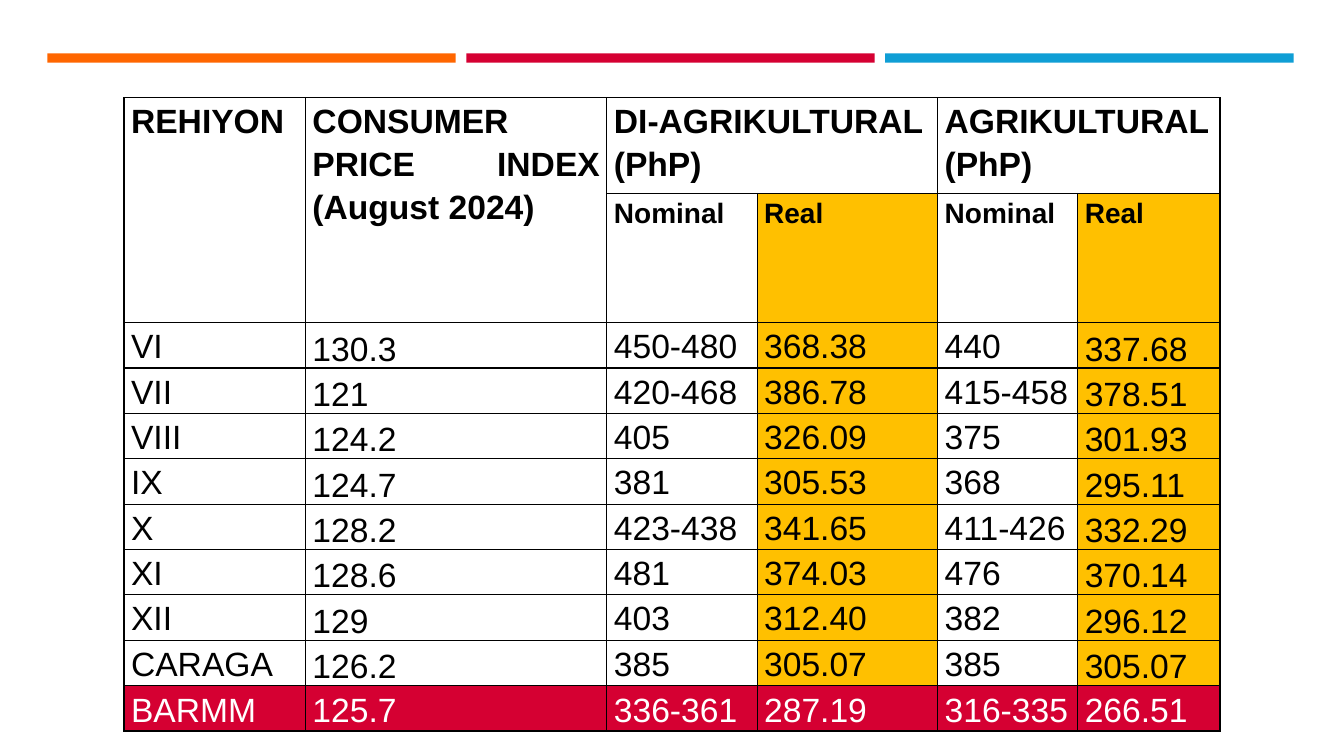
from dataclasses import dataclass

from lxml.etree import SubElement
from pptx import Presentation
from pptx.dml.color import RGBColor
from pptx.enum.shapes import MSO_SHAPE
from pptx.enum.text import MSO_ANCHOR as Anchor, PP_ALIGN as Align
from pptx.oxml.ns import qn
from pptx.slide import Slide
from pptx.table import Table, _Cell as Cell
from pptx.util import Inches, Length, Pt

SLIDE_WIDTH = Inches(13.33)
SLIDE_HEIGHT = Inches(7.5)


@dataclass(frozen=True)
class Theme:
    font: str = "Arial"
    body_size: int = 24
    subhead_size: int = 20
    line_spacing: float = 1.15
    border_width: int = 1
    text: str = "000000"
    paper: str = "FFFFFF"
    orange: str = "FF6600"
    red: str = "D50032"
    blue: str = "0F9ED5"
    real_wage: str = "FFC000"


THEME = Theme()


@dataclass(frozen=True)
class CellStyle:
    fill: str = THEME.paper
    color: str = THEME.text
    size: int = THEME.body_size
    bold: bool = False
    align: Align = Align.JUSTIFY
    anchor: Anchor = Anchor.TOP


@dataclass(frozen=True)
class HeaderCell:
    row: int
    column: int
    text: str
    row_span: int = 1
    column_span: int = 1
    size: int = THEME.body_size


@dataclass(frozen=True)
class RegionWages:
    region: str
    price_index: str
    nonfarm_nominal: str
    nonfarm_real: str
    farm_nominal: str
    farm_real: str

    def values(self) -> tuple[str, ...]:
        return (self.region, self.price_index, self.nonfarm_nominal,
                self.nonfarm_real, self.farm_nominal, self.farm_real)


BAR_COLORS = (THEME.orange, THEME.red, THEME.blue)
BAR_LEFT, BAR_TOP, BAR_WIDTH, BAR_HEIGHT, BAR_GAP = 3.53, 7.07, 30.38, 1.2, 0.79

TABLE_LEFT, TABLE_TOP = 9.23, 12.93
COLUMN_SHARES = (13.5, 22.43, 11.18, 13.43, 10.43, 10.58)
HEADER_SHARES = (12.67, 17.07)
BODY_SHARE = 6
REAL_COLUMNS = (3, 5)
BOTTOM_COLUMNS = (1, 5)

HEADERS = (
    HeaderCell(0, 0, "REHIYON", row_span=2),
    HeaderCell(0, 1, "CONSUMER PRICE INDEX (August 2024)", row_span=2),
    HeaderCell(0, 2, "DI-AGRIKULTURAL (PhP)", column_span=2),
    HeaderCell(0, 4, "AGRIKULTURAL (PhP)", column_span=2),
    *(HeaderCell(1, column, "Real" if column in REAL_COLUMNS else "Nominal",
                 size=THEME.subhead_size) for column in range(2, 6)),
)

REGIONS = (
    RegionWages("VI", "130.3", "450-480", "368.38", "440", "337.68"),
    RegionWages("VII", "121", "420-468", "386.78", "415-458", "378.51"),
    RegionWages("VIII", "124.2", "405", "326.09", "375", "301.93"),
    RegionWages("IX", "124.7", "381", "305.53", "368", "295.11"),
    RegionWages("X", "128.2", "423-438", "341.65", "411-426", "332.29"),
    RegionWages("XI", "128.6", "481", "374.03", "476", "370.14"),
    RegionWages("XII", "129", "403", "312.40", "382", "296.12"),
    RegionWages("CARAGA", "126.2", "385", "305.07", "385", "305.07"),
    RegionWages("BARMM", "125.7", "336-361", "287.19", "316-335", "266.51"),
)
HIGHLIGHTED_REGION = "BARMM"


def across(percent: float) -> Length:
    return Length(round(SLIDE_WIDTH * percent / 100))


def down(percent: float) -> Length:
    return Length(round(SLIDE_HEIGHT * percent / 100))


def draw_bars(slide: Slide) -> None:
    for index, color in enumerate(BAR_COLORS):
        left = BAR_LEFT + index * (BAR_WIDTH + BAR_GAP)
        bar = slide.shapes.add_shape(MSO_SHAPE.RECTANGLE, across(left), down(BAR_TOP),
                                     across(BAR_WIDTH), down(BAR_HEIGHT))
        bar.shadow.inherit = False
        bar.fill.solid()
        bar.fill.fore_color.rgb = RGBColor.from_string(color)
        bar.line.fill.background()


def add_borders(cell: Cell) -> None:
    properties = cell._tc.get_or_add_tcPr()
    for side in ("a:lnL", "a:lnR", "a:lnT", "a:lnB"):
        line = SubElement(properties, qn(side), w=str(Pt(THEME.border_width)))
        fill = SubElement(line, qn("a:solidFill"))
        SubElement(fill, qn("a:srgbClr"), val=THEME.text)


def prepare_cell(cell: Cell) -> None:
    add_borders(cell)
    cell.margin_left = cell.margin_right = Inches(0.07)
    cell.margin_top = cell.margin_bottom = 0
    cell.fill.solid()
    cell.fill.fore_color.rgb = RGBColor.from_string(THEME.paper)


def write_cell(cell: Cell, text: str, style: CellStyle) -> None:
    cell.text = text
    cell.vertical_anchor = style.anchor
    cell.fill.fore_color.rgb = RGBColor.from_string(style.fill)
    paragraph = cell.text_frame.paragraphs[0]
    paragraph.alignment = style.align
    paragraph.line_spacing = THEME.line_spacing
    paragraph.font.name = THEME.font
    paragraph.font.size = Pt(style.size)
    paragraph.font.bold = style.bold
    paragraph.font.color.rgb = RGBColor.from_string(style.color)


def column_fill(column: int) -> str:
    return THEME.real_wage if column in REAL_COLUMNS else THEME.paper


def body_style(region: str, column: int) -> CellStyle:
    if region == HIGHLIGHTED_REGION:
        return CellStyle(fill=THEME.red, color=THEME.paper, align=Align.LEFT,
                         anchor=Anchor.MIDDLE)
    anchor = Anchor.BOTTOM if column in BOTTOM_COLUMNS else Anchor.TOP
    return CellStyle(fill=column_fill(column), anchor=anchor)


def add_wage_table(slide: Slide) -> Table:
    row_shares = (*HEADER_SHARES, *(BODY_SHARE for _ in REGIONS))
    table = slide.shapes.add_table(
        len(row_shares), len(COLUMN_SHARES), across(TABLE_LEFT), down(TABLE_TOP),
        across(sum(COLUMN_SHARES)), down(sum(row_shares))).table
    table.first_row = table.horz_banding = False
    for column, share in zip(table.columns, COLUMN_SHARES):
        column.width = across(share)
    for row, share in zip(table.rows, row_shares):
        row.height = down(share)
    for cell in table.iter_cells():
        prepare_cell(cell)
    return table


def fill_wage_table(table: Table) -> None:
    for header in HEADERS:
        cell = table.cell(header.row, header.column)
        last_row = header.row + header.row_span - 1
        last_column = header.column + header.column_span - 1
        if (last_row, last_column) != (header.row, header.column):
            cell.merge(table.cell(last_row, last_column))
        write_cell(cell, header.text, CellStyle(
            fill=column_fill(header.column), size=header.size, bold=True))
    for row, wages in enumerate(REGIONS, start=len(HEADER_SHARES)):
        for column, text in enumerate(wages.values()):
            write_cell(table.cell(row, column), text, body_style(wages.region, column))


def main() -> None:
    presentation = Presentation()
    presentation.slide_width = SLIDE_WIDTH
    presentation.slide_height = SLIDE_HEIGHT
    slide = presentation.slides.add_slide(presentation.slide_layouts[6])
    draw_bars(slide)
    fill_wage_table(add_wage_table(slide))
    presentation.save("out.pptx")


if __name__ == "__main__":
    main()
